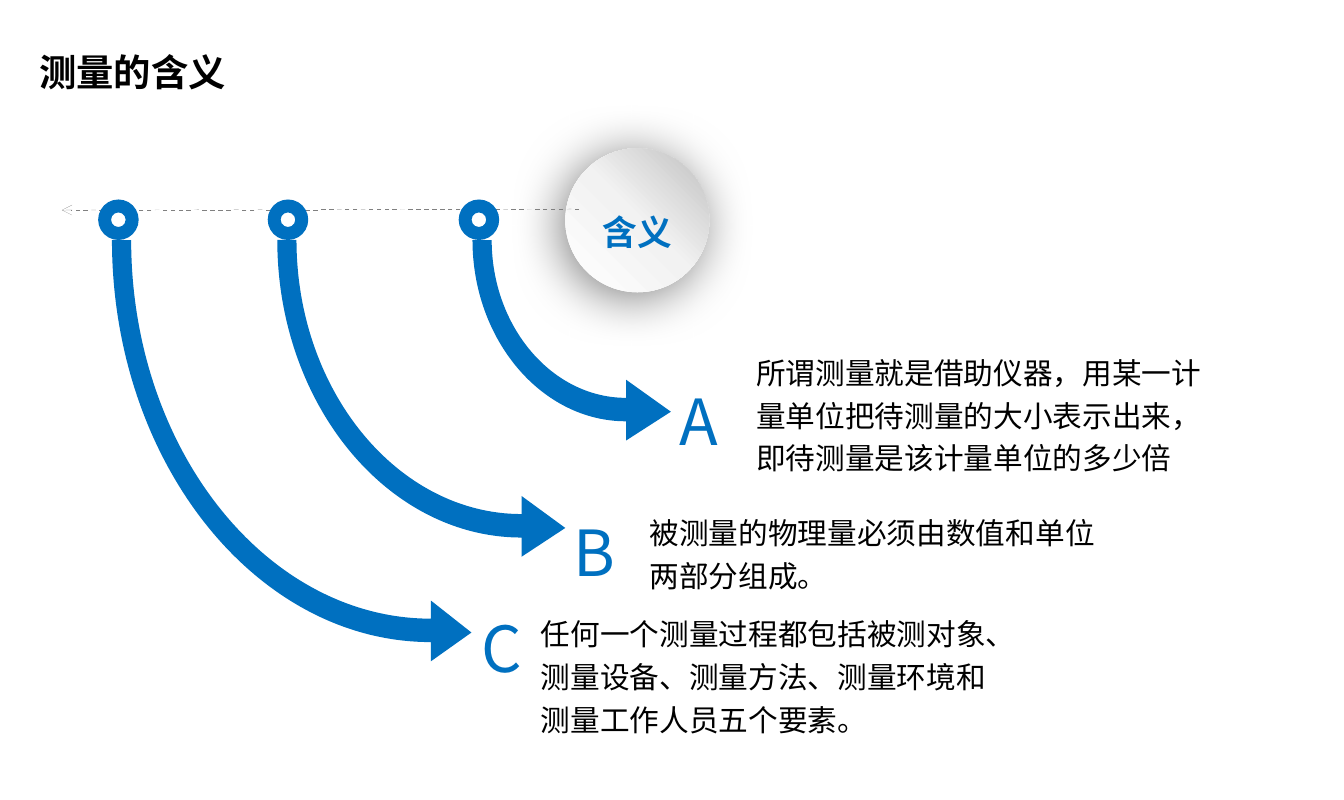
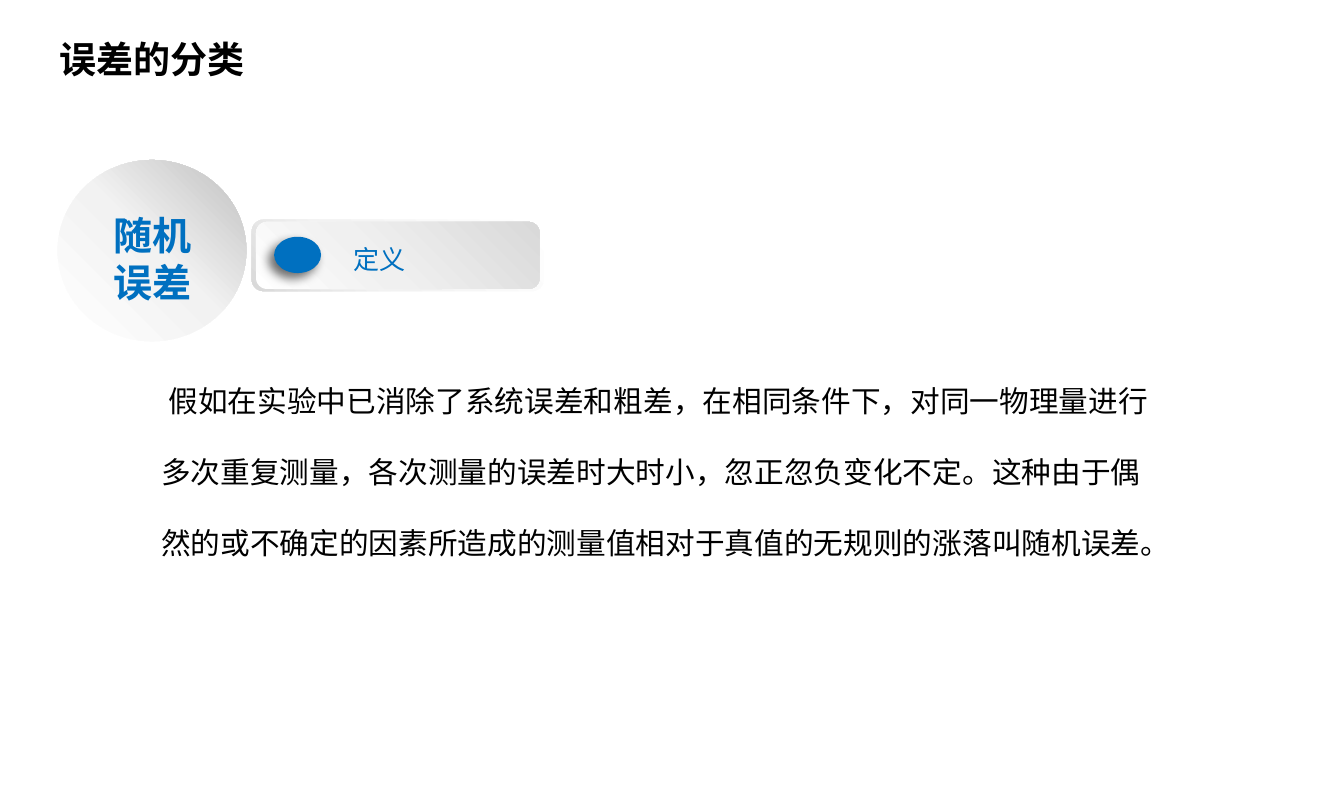
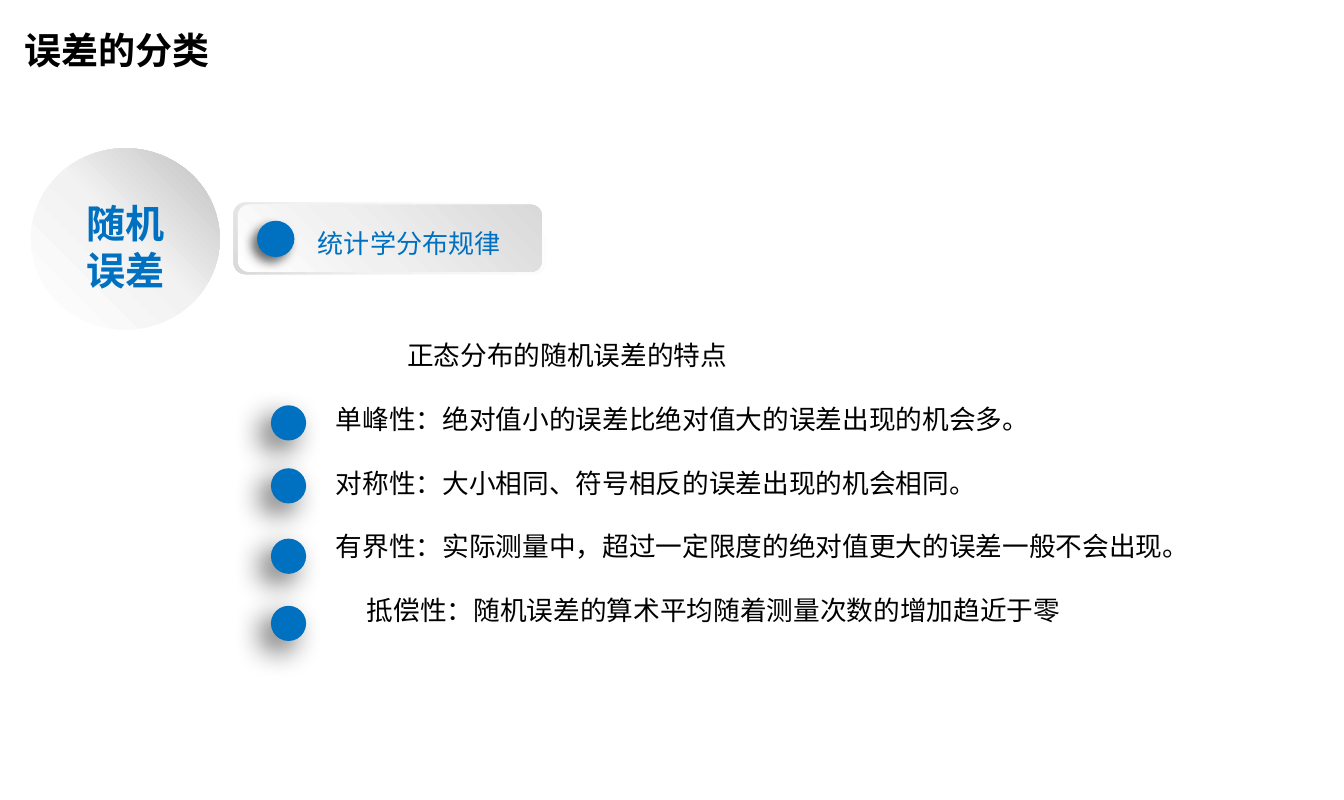
from lxml import etree
from pptx import Presentation
from pptx.dml.color import RGBColor
from pptx.enum.dml import MSO_LINE
from pptx.enum.shapes import MSO_CONNECTOR, MSO_SHAPE
from pptx.enum.text import MSO_ANCHOR, PP_ALIGN
from pptx.oxml import parse_xml
from pptx.oxml.ns import nsdecls, qn
from pptx.util import Inches, Pt

OVAL, DONUT = MSO_SHAPE.OVAL, MSO_SHAPE.DONUT
ROUNDED = MSO_SHAPE.ROUNDED_RECTANGLE
LEFT, CENTER = PP_ALIGN.LEFT, PP_ALIGN.CENTER
TOP, MIDDLE = MSO_ANCHOR.TOP, MSO_ANCHOR.MIDDLE
STRAIGHT, DASH = MSO_CONNECTOR.STRAIGHT, MSO_LINE.DASH

FONT = "Noto Sans CJK SC"
BLUE = RGBColor(0x00, 0x70, 0xC0)
BLACK = RGBColor(0x00, 0x00, 0x00)
GRAY = RGBColor(0x80, 0x80, 0x80)
WHITE = RGBColor(0xFF, 0xFF, 0xFF)
PALE = RGBColor(0xF2, 0xF2, 0xF2)
SOFT = RGBColor(0xF0, 0xF0, 0xF0)
LIGHT = RGBColor(0xD9, 0xD9, 0xD9)
SILVER = RGBColor(0xBF, 0xBF, 0xBF)

BALL_STOPS = [(0, WHITE), (51, PALE), (100, SILVER)]
RIM_STOPS = [(0, WHITE), (62, PALE), (100, LIGHT)]
FACE_STOPS = [(0, WHITE), (42, SOFT), (100, LIGHT)]
TEXT_INSETS = (0.08, 0.04)
RING_TOP, RING_SIZE = 1.87, 0.38
ARROW_TOP = RING_TOP + RING_SIZE
ARC_PULL = 0.55  # share of the radius that bends a Bezier into a quarter ellipse


def style_paragraph(paragraph, size, color=BLACK, bold=False, align=LEFT):
    paragraph.alignment = align
    for run in paragraph.runs:
        font = run.font
        font.name, font.size, font.bold = FONT, Pt(size), bold
        font.color.rgb = color
        etree.SubElement(run._r.get_or_add_rPr(), qn("a:ea"), typeface=FONT)


def set_insets(frame, insets):
    frame.margin_left = frame.margin_right = Inches(insets[0])
    frame.margin_top = frame.margin_bottom = Inches(insets[1])


def add_text(slide, box, lines, size, color=BLACK, bold=False, align=LEFT,
             anchor=TOP, insets=(0.1, 0.05), wrap=True, spacing=None,
             gap=0, indents=()):
    """Add one paragraph per line; gap is in points, indents in inches."""
    frame = slide.shapes.add_textbox(*map(Inches, box)).text_frame
    frame.word_wrap, frame.vertical_anchor = wrap, anchor
    set_insets(frame, insets)
    frame.text = "\n".join(lines)
    for paragraph in frame.paragraphs:
        style_paragraph(paragraph, size, color, bold, align)
        if spacing:
            paragraph.line_spacing = spacing
    if gap:
        for paragraph in frame.paragraphs[1:]:
            paragraph.space_before = Pt(gap)
    for paragraph, indent in zip(frame.paragraphs, indents):
        paragraph._p.get_or_add_pPr().set("indent", str(Inches(indent)))


def add_title(slide, left, top, title, size=25):
    add_text(slide, (left, top, 1.95, 0.52), [title], size, bold=True, wrap=False)


def fill_plain(shape, color):
    shape.shadow.inherit = False
    shape.fill.solid()
    shape.fill.fore_color.rgb = color
    shape.line.fill.background()


def fill_gradient(shape, stops, angle):
    """Blend the stops along an angle in degrees, clockwise from the right."""
    shape.shadow.inherit = False
    shape.line.fill.background()
    marks = "".join(f'<a:gs pos="{position * 1000}"><a:srgbClr val="{color}"/></a:gs>'
                    for position, color in stops)
    shape._element.spPr.insert(2, parse_xml(
        f'<a:gradFill {nsdecls("a")} rotWithShape="1"><a:gsLst>{marks}</a:gsLst>'
        f'<a:lin ang="{angle * 60000}" scaled="0"/></a:gradFill>'))


def cast_shadow(shape, opacity, blur, distance):
    """Throw a black shadow to the lower left; lengths are in points."""
    shape._element.spPr.find(qn("a:effectLst")).append(parse_xml(
        f'<a:outerShdw {nsdecls("a")} blurRad="{Pt(blur)}" dist="{Pt(distance)}" '
        f'dir="{135 * 60000}" algn="tr" rotWithShape="0"><a:srgbClr val="000000">'
        f'<a:alpha val="{opacity * 1000}"/></a:srgbClr></a:outerShdw>'))


def add_preset(slide, preset, box):
    return slide.shapes.add_shape(preset, *map(Inches, box))


def add_ball(slide, box):
    ball = add_preset(slide, OVAL, box)
    fill_gradient(ball, BALL_STOPS, 315)
    return ball


def add_dot(slide, box, opacity, blur, distance):
    dot = add_preset(slide, OVAL, box)
    fill_plain(dot, BLUE)
    cast_shadow(dot, opacity, blur, distance)


def add_ring(slide, left):
    ring = add_preset(slide, DONUT, (left, RING_TOP, RING_SIZE, RING_SIZE))
    ring.adjustments[0] = 0.32
    fill_plain(ring, BLUE)


def quarter_arc(left, right, bottom):
    """Bezier points of a quarter ellipse from its left end to its lowest point."""
    return [(left, ARROW_TOP),
            (left, ARROW_TOP + ARC_PULL * (bottom - ARROW_TOP)),
            (right - ARC_PULL * (right - left), bottom),
            (right, bottom)]


def bend(segments):
    """Turn three straight segments into one Bezier curve."""
    curve = etree.Element(qn("a:cubicBezTo"))
    segments[0].addprevious(curve)
    for segment in segments:
        curve.append(segment[0])
        segment.getparent().remove(segment)


def add_curved_arrow(slide, left, neck, tip_x, tip_y):
    outer = quarter_arc(left, neck, tip_y + 0.09)
    inner = quarter_arc(left + 0.18, neck, tip_y - 0.13)
    head = [(neck, tip_y + 0.27), (tip_x, tip_y), (neck, tip_y - 0.3)]
    outline = [(Inches(x), Inches(y)) for x, y in outer + head + inner[::-1]]
    builder = slide.shapes.build_freeform(*outline[0])
    builder.add_line_segments(outline[1:], close=True)
    arrow = builder.convert_to_shape()
    segments = list(arrow._element.spPr.iter(qn("a:lnTo")))
    bend(segments[:3])
    bend(segments[7:10])
    fill_plain(arrow, BLUE)


def add_axis(slide):
    ends = map(Inches, (5.43, 1.96, 0.58, 1.97))
    axis = slide.shapes.add_connector(STRAIGHT, *ends)
    axis.line.color.rgb = GRAY
    axis.line.dash_style = DASH
    outline = axis._element.spPr.find(qn("a:ln"))
    outline.set("w", "0")
    etree.SubElement(outline, qn("a:tailEnd"), type="arrow")
    etree.SubElement(axis._element.spPr, qn("a:effectLst"))


def add_topic(slide, left, top):
    add_ball(slide, (left, top, 1.77, 1.7))
    add_text(slide, (left + 0.2, top + 0.43, 1.38, 0.99), ["随机", "误差"],
             26.4, BLUE, bold=True, align=CENTER)


def add_pill(slide, left, top, width, dot_box, label, label_box):
    rim = add_preset(slide, ROUNDED, (left, top, width, 0.67))
    fill_gradient(rim, RIM_STOPS, 135)
    face = add_preset(slide, ROUNDED, (left + 0.04, top + 0.02, width - 0.08, 0.63))
    fill_gradient(face, FACE_STOPS, 315)
    add_dot(slide, dot_box, 57, 7, 5)
    add_text(slide, label_box, [label], 17.6, BLUE, insets=(0.11, 0.06), wrap=False)


def build_meaning(slide):
    ball = add_ball(slide, (5.3, 1.39, 1.35, 1.35))
    cast_shadow(ball, 50, 35, 5)
    frame = ball.text_frame
    frame.vertical_anchor = MIDDLE
    set_insets(frame, TEXT_INSETS)
    frame.text = "含义"
    heading = frame.paragraphs[0]
    style_paragraph(heading, 40.3, BLUE, bold=True, align=CENTER)
    heading.runs[0]._r.get_or_add_rPr().set("baseline", "-3000")
    add_axis(slide)

    # ring left, arrow (left, neck, tip x, tip y), letter, its box, text box, lines
    meanings = [
        (4.3, (4.43, 5.87, 6.29, 3.86), "A", (6.29, 3.54, 0.58, 0.8),
         (7.01, 3.22, 4.37, 1.29),
         ["所谓测量就是借助仪器，用某一计量单位把待测量的大小表示出来，即待测量是该计量单位的多少倍"]),
        (2.51, (2.6, 4.89, 5.3, 4.95), "B", (5.3, 4.77, 0.53, 0.8),
         (6.01, 4.72, 4.34, 0.89),
         ["被测量的物理量必须由数值和单位两部分组成。"]),
        (0.92, (1.05, 4.04, 4.42, 5.93), "C", (4.43, 5.67, 0.56, 0.8),
         (4.99, 5.67, 4.75, 1.29),
         ["任何一个测量过程都包括被测对象、测量设备、测量方法、测量环境和",
          "测量工作人员五个要素。"]),
    ]
    for ring_left, arrow, letter, letter_box, box, lines in meanings:
        add_ring(slide, ring_left)
        add_curved_arrow(slide, *arrow)
        add_text(slide, letter_box, [letter], 42.9, BLUE, anchor=MIDDLE,
                 insets=TEXT_INSETS, wrap=False)
        add_text(slide, box, lines, 20, insets=TEXT_INSETS, spacing=1.2)
    add_title(slide, 0.27, 0.41, "测量的含义", 25.2)


def build_definition(slide):
    add_title(slide, 0.46, 0.29, "误差的分类")
    add_text(slide, (1.42, 3.54, 9.53, 1.78), [
        "假如在实验中已消除了系统误差和粗差，在相同条件下，对同一物理量进行",
        "多次重复测量，各次测量的误差时大时小，忽正忽负变化不定。这种由于偶",
        "然的或不确定的因素所造成的测量值相对于真值的无规则的涨落叫随机误差。",
    ], 20, insets=(0.09, 0.05), gap=24, indents=[0.07])
    add_topic(slide, 0.54, 1.5)
    add_pill(slide, 2.36, 2.06, 2.74, (2.57, 2.22, 0.44, 0.34),
             "定义", (3.2, 2.22, 0.71, 0.41))


def build_distribution(slide):
    add_title(slide, 0.13, 0.21, "误差的分类")
    add_topic(slide, 0.29, 1.39)
    add_pill(slide, 2.19, 1.9, 2.93, (2.41, 2.07, 0.35, 0.34),
             "统计学分布规律", (2.87, 2.07, 1.94, 0.41))
    for top in (3.8, 4.39, 5.05, 5.68):
        add_dot(slide, (2.54, top, 0.33, 0.33), 60, 20, 10)
    add_text(slide, (3.05, 3.13, 8.36, 4.04), [
        "正态分布的随机误差的特点",
        "单峰性：绝对值小的误差比绝对值大的误差出现的机会多。",
        "对称性：大小相同、符号相反的误差出现的机会相同。",
        "有界性：实际测量中，超过一定限度的绝对值更大的误差一般不会出现。",
        "抵偿性：随机误差的算术平均随着测量次数的增加趋近于零",
    ], 18, gap=21.4, indents=[0.67, 0, 0, 0, 0.29])


def main():
    deck = Presentation()
    deck.slide_width, deck.slide_height = Inches(12.6), Inches(7.5)
    for build in (build_meaning, build_definition, build_distribution):
        build(deck.slides.add_slide(deck.slide_layouts[6]))
    deck.save("out.pptx")


if __name__ == "__main__":
    main()
